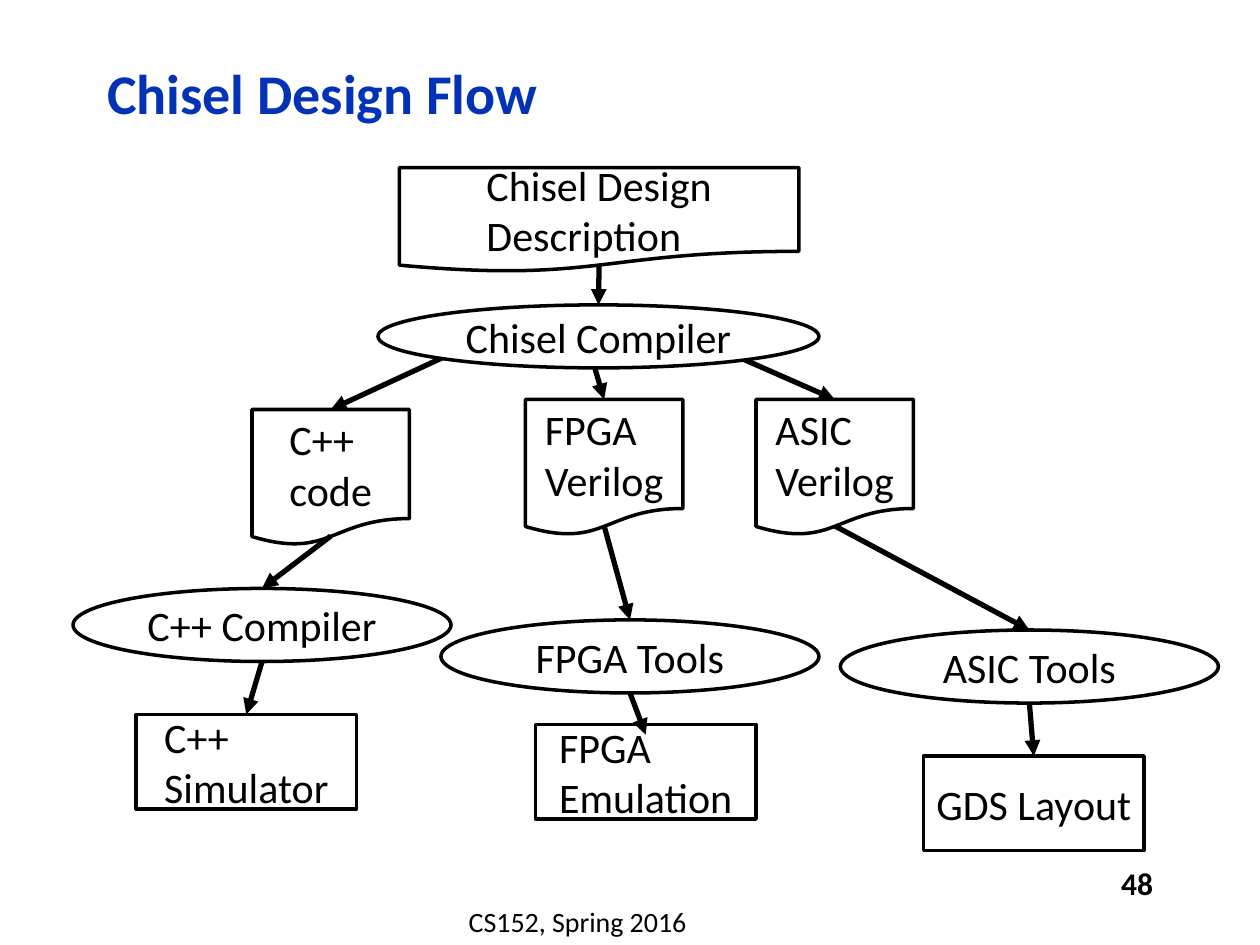
import pptx
import pptx.dml.color
import pptx.enum.shapes
import pptx.enum.text
import pptx.oxml.ns
import pptx.util
from lxml import etree
from pptx.util import Inches

BLACK = pptx.dml.color.RGBColor(0x00, 0x00, 0x00)
WHITE = pptx.dml.color.RGBColor(0xFF, 0xFF, 0xFF)
BLUE = pptx.dml.color.RGBColor(0x03, 0x32, 0xB7)
FONT = "Calibri"
SHAPES = pptx.enum.shapes.MSO_SHAPE
ALIGN = pptx.enum.text.PP_ALIGN
MIDDLE = pptx.enum.text.MSO_ANCHOR.MIDDLE
DOC_SIZE = (1.25, 1.08)
TOOL_SIZE = (3, 0.58)
RESULT_SIZE = (1.75, 0.75)
DOC_EDGE = 0.93

BRANCHES = [
    {"doc": ("C++ code", 2, 3.25), "tool": ("C++ Compiler", 0.58, 4.67),
     "result": ("C++ Simulator", 1.08, 5.67), "start": (3.51, 2.84)},
    {"doc": ("FPGA Verilog", 4.17, 3.17), "tool": ("FPGA Tools", 3.5, 4.92),
     "result": ("FPGA Emulation", 4.25, 5.75), "start": (4.67, 2.75), "overlap": 0.08},
    {"doc": ("ASIC Verilog", 6, 3.17), "tool": ("ASIC Tools", 6.67, 5),
     "result": ("GDS Layout", 7.33, 6), "start": (5.67, 2.75)},
]


def format_text(tf, size, color=BLACK, bold=False, align=ALIGN.LEFT):
    tf.word_wrap = True
    tf.vertical_anchor = MIDDLE
    for p in tf.paragraphs:
        p.alignment = align
        for r in p.runs:
            r.font.name = FONT
            r.font.size = pptx.util.Pt(size)
            r.font.bold = bold
            r.font.color.rgb = color


def add_node(s, kind, text, left, top, width, height):
    sp = s.shapes.add_shape(kind, Inches(left), Inches(top), Inches(width), Inches(height))
    sp.shadow.inherit = False
    sp.fill.solid()
    sp.fill.fore_color.rgb = WHITE
    sp.line.color.rgb = BLACK
    sp.line.width = pptx.util.Pt(2)
    tf = sp.text_frame
    tf.text = text
    format_text(tf, 24)
    tf._txBody.bodyPr.set("anchorCtr", "1")
    if kind == SHAPES.OVAL:
        tf.margin_left = tf.margin_right = tf.margin_top = tf.margin_bottom = 0
    return sp


def add_arrow(s, start, end):
    line = s.shapes.add_connector(pptx.enum.shapes.MSO_CONNECTOR.STRAIGHT, *start, *end)
    line.line.color.rgb = BLACK
    line.line.width = pptx.util.Pt(3)
    ln = line.line._get_or_add_ln()
    etree.SubElement(ln, pptx.oxml.ns.qn("a:tailEnd"), type="triangle")
    etree.SubElement(line._element.spPr, pptx.oxml.ns.qn("a:effectLst"))
    return line


def top_of(sp):
    return sp.left + sp.width // 2, sp.top


def bottom_of(sp, share=1):
    return sp.left + sp.width // 2, sp.top + int(sp.height * share)


def link(s, start, sp):
    add_arrow(s, start, top_of(sp)).end_connect(sp, 0)


def add_branch(s, doc, tool, result, start, overlap=0):
    doc_sp = add_node(s, SHAPES.FLOWCHART_DOCUMENT, *doc, *DOC_SIZE)
    tool_sp = add_node(s, SHAPES.OVAL, *tool, *TOOL_SIZE)
    result_sp = add_node(s, SHAPES.RECTANGLE, *result, *RESULT_SIZE)
    link(s, [Inches(v) for v in start], doc_sp)
    link(s, bottom_of(doc_sp, DOC_EDGE), tool_sp)
    if overlap:
        x, y = top_of(result_sp)
        add_arrow(s, bottom_of(tool_sp), (x, y + Inches(overlap)))
    else:
        link(s, bottom_of(tool_sp), result_sp)


def add_source(s, left, top):
    doc = add_node(s, SHAPES.FLOWCHART_DOCUMENT, "Chisel Design Description",
                   left, top, 3.17, 0.83)
    compiler = add_node(s, SHAPES.OVAL, "Chisel Compiler", left - 0.17, top + 1.09, 3.5, 0.5)
    link(s, bottom_of(doc, DOC_EDGE), compiler)


def add_title(s, left, top, width, height):
    sp = s.shapes.title
    sp.left, sp.top, sp.width, sp.height = map(Inches, (left, top, width, height))
    sp.text_frame.text = "Chisel Design Flow"
    format_text(sp.text_frame, 32, BLUE, True)
    sp.text_frame.paragraphs[0].line_spacing = 0.9


def add_label(s, text, box, size, bold, align):
    sp = s.shapes.add_textbox(*map(Inches, box))
    sp.text_frame.text = text
    format_text(sp.text_frame, size, BLACK, bold, align)


def main():
    prs = pptx.Presentation()
    prs.slide_width, prs.slide_height = Inches(10), Inches(7.5)
    s = prs.slides.add_slide(prs.slide_layouts[5])
    add_title(s, 0.75, 0.36, 7.98, 0.81)
    for branch in BRANCHES:
        add_branch(s, **branch)
    add_source(s, 3.17, 1.33)
    add_label(s, "48", (7.17, 6.85, 2.08, 0.32), 18, True, ALIGN.RIGHT)
    add_label(s, "CS152, Spring 2016", (2.92, 7.13, 3.33, 0.37), 16, False, ALIGN.CENTER)
    prs.save("out.pptx")


if __name__ == "__main__":
    main()
